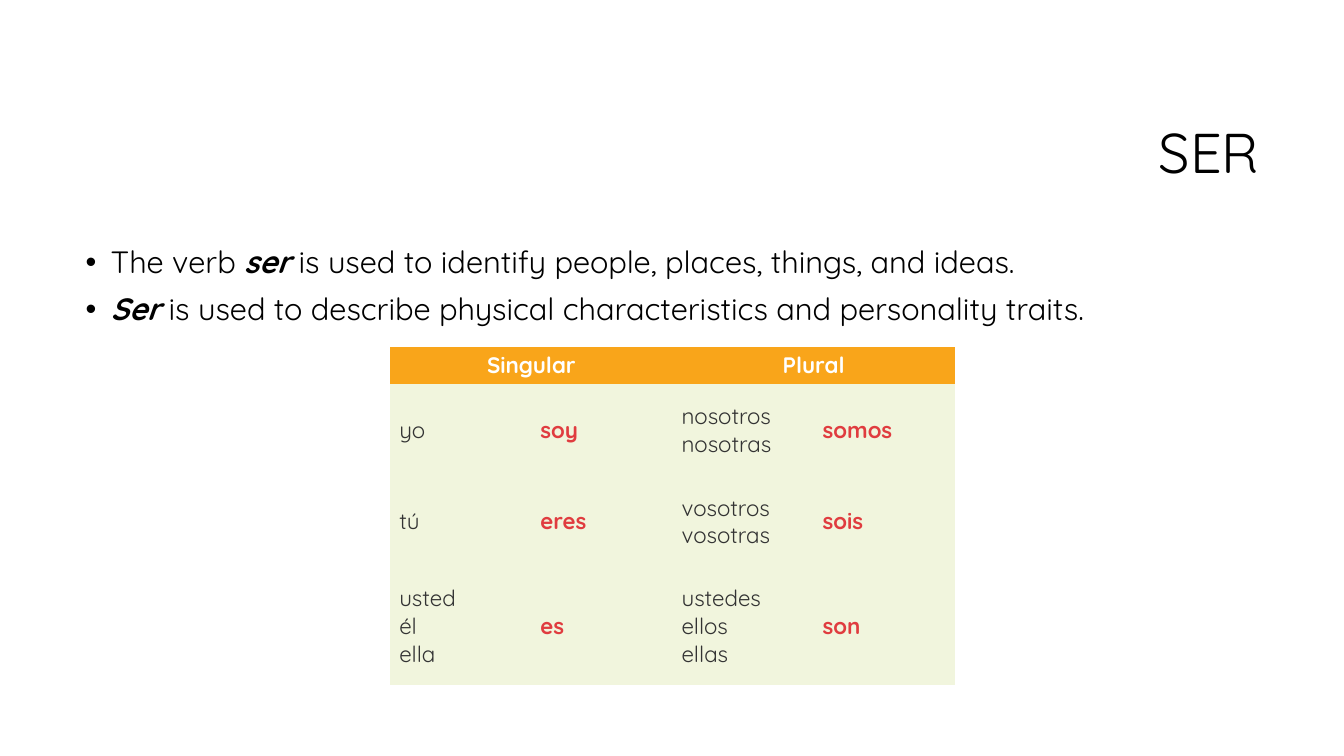
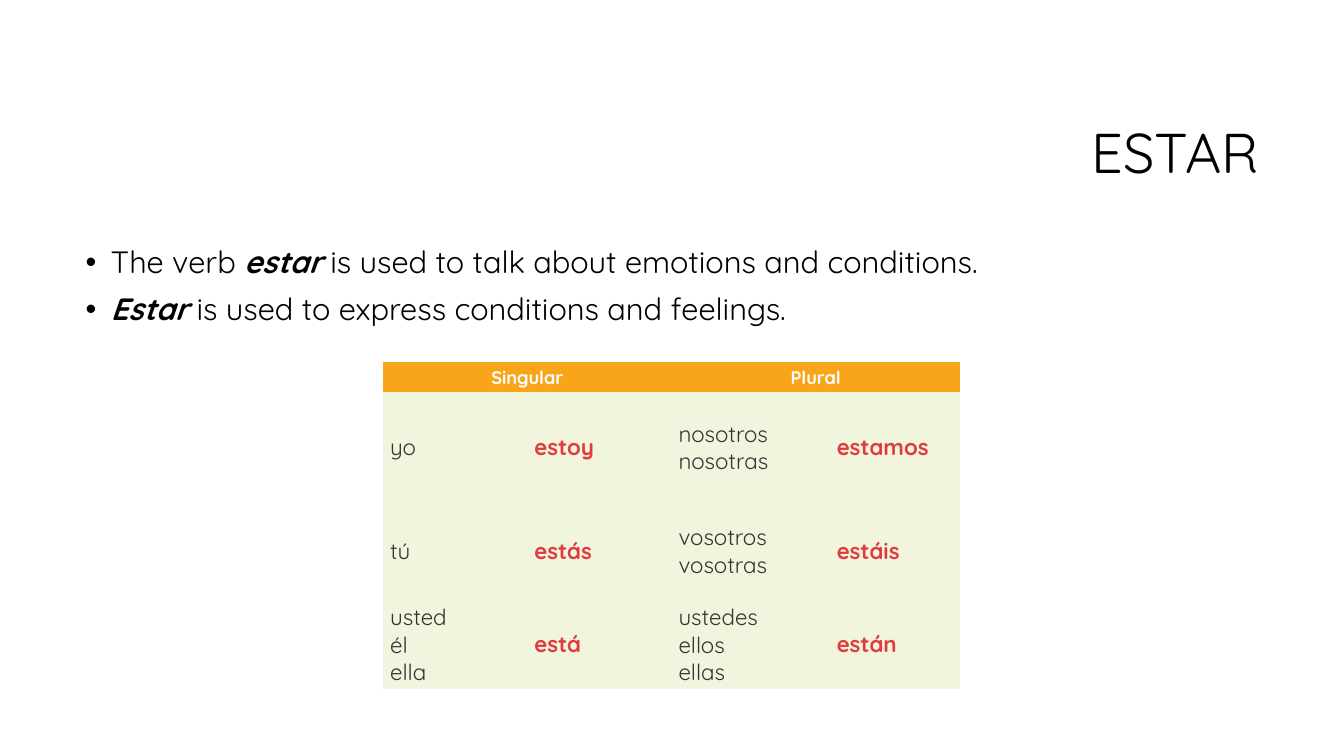
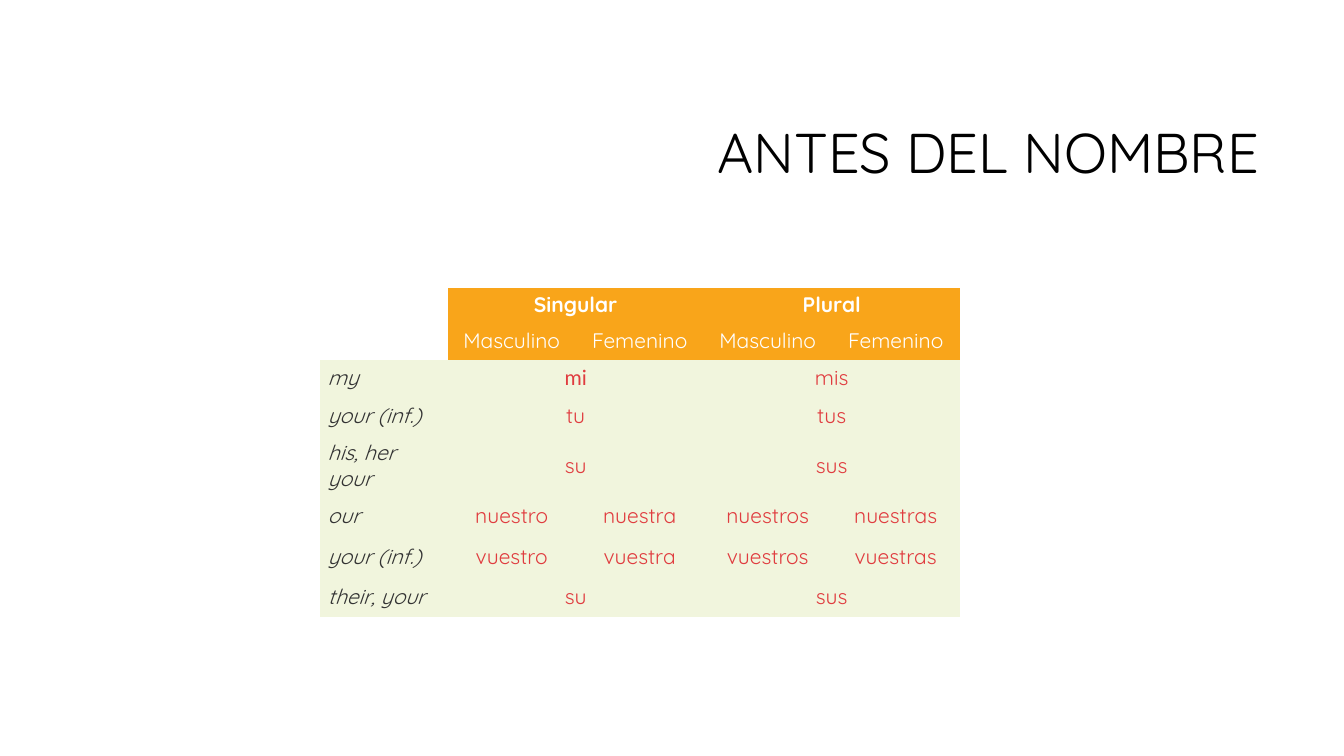
from dataclasses import dataclass

from lxml.etree import SubElement
from pptx import Presentation
from pptx.dml.color import RGBColor
from pptx.enum.text import MSO_ANCHOR as Anchor, MSO_AUTO_SIZE as AutoSize, PP_ALIGN as Align
from pptx.oxml.ns import qn
from pptx.util import Inches, Pt


@dataclass(frozen=True)
class Theme:
    font: str = "Quicksand"
    accent_font: str = "Lato"
    black: str = "000000"
    white: str = "FFFFFF"
    grey: str = "333333"
    red: str = "E03C3F"
    orange: str = "F9A51A"
    cream: str = "F1F5DD"
    title_size: int = 40
    body_size: int = 22
    table_size: int = 16
    small_header_size: int = 13
    possessive_size: int = 15
    line_spacing: float = 0.9
    bullet_gap: int = 10


THEME = Theme()
TITLE_ONLY = 5
TITLE_BOX = (3.17, 0.84, 9.42, 1.41)
BODY_BOX = (0.75, 2.4, 11.83, 4.4)
PLAIN_TABLE_STYLE = "{2D5ABB26-0587-4C30-8999-92F81FD0307C}"


def set_font(paragraph, size, color, name=THEME.font, bold=False, italic=False):
    font = paragraph.font
    font.name = name
    font.size = Pt(size)
    font.bold = bold
    font.italic = italic
    font.color.rgb = RGBColor.from_string(color)


def add_titled_slide(presentation, title):
    slide = presentation.slides.add_slide(presentation.slide_layouts[TITLE_ONLY])
    shape = slide.shapes.title
    shape.left, shape.top, shape.width, shape.height = map(Inches, TITLE_BOX)
    frame = shape.text_frame
    frame.auto_size = AutoSize.NONE
    frame.vertical_anchor = Anchor.MIDDLE
    paragraph = frame.paragraphs[0]
    paragraph.text = title
    paragraph.alignment = Align.RIGHT
    paragraph.line_spacing = THEME.line_spacing
    set_font(paragraph, THEME.title_size, THEME.black)
    return slide


def add_bullets(slide, box, bullets):
    frame = slide.shapes.add_textbox(*map(Inches, box)).text_frame
    frame.word_wrap = True
    for index, (before, verb, after) in enumerate(bullets):
        paragraph = frame.add_paragraph() if index else frame.paragraphs[0]
        paragraph.line_spacing = THEME.line_spacing
        paragraph.space_before = Pt(THEME.bullet_gap if index else 0)
        properties = paragraph._p.get_or_add_pPr()
        properties.set("marL", str(Inches(0.25)))
        properties.set("indent", str(Inches(-0.25)))
        SubElement(properties, qn("a:buFont"), typeface="Arial")
        SubElement(properties, qn("a:buChar"), char="•")
        set_font(paragraph, THEME.body_size, THEME.black)
        if before:
            paragraph.add_run().text = before
        emphasis = paragraph.add_run()
        emphasis.text = verb
        emphasis.font.bold = emphasis.font.italic = True
        paragraph.add_run().text = after


def add_plain_table(slide, left, top, columns, rows):
    frame = slide.shapes.add_table(
        len(rows), len(columns), Inches(left), Inches(top), Inches(sum(columns)), Inches(sum(rows))
    )
    next(frame.element.iter(qn("a:tableStyleId"))).text = PLAIN_TABLE_STYLE
    table = frame.table
    table.first_row = table.horz_banding = False
    for column, width in zip(table.columns, columns):
        column.width = Inches(width)
    for row, height in zip(table.rows, rows):
        row.height = Inches(height)
    return table


def fill_cell(cell, text, fill, margins, size, color, align=Align.LEFT, **font):
    cell.fill.solid()
    cell.fill.fore_color.rgb = RGBColor.from_string(fill)
    cell.vertical_anchor = Anchor.MIDDLE
    cell.margin_left = cell.margin_right = Inches(margins[0])
    cell.margin_top = cell.margin_bottom = Inches(margins[1])
    paragraph = cell.text_frame.paragraphs[0]
    paragraph.text = text
    paragraph.alignment = align
    set_font(paragraph, size, color, **font)


def add_header_pair(table, first_column, margins, size):
    for column, text in zip((first_column, first_column + 2), ("Singular", "Plural")):
        cell = table.cell(0, column)
        cell.merge(table.cell(0, column + 1))
        fill_cell(cell, text, THEME.orange, margins, size, THEME.white, Align.CENTER, bold=True)


def add_conjugation(slide, left, top, columns, rows, side_margin, header_size, forms):
    table = add_plain_table(slide, left, top, columns, rows)
    margins = (side_margin, 0.04)
    add_header_pair(table, 0, margins, header_size)
    pronouns = (
        ("yo", "nosotros\nnosotras"),
        ("tú", "vosotros\nvosotras"),
        ("usted\nél\nella", "ustedes\nellos\nellas"),
    )
    for row, (subjects, verbs) in enumerate(zip(pronouns, forms), 1):
        for pair, (subject, verb) in enumerate(zip(subjects, verbs)):
            fill_cell(table.cell(row, 2 * pair), subject, THEME.cream, margins,
                      THEME.table_size, THEME.grey)
            fill_cell(table.cell(row, 2 * pair + 1), verb, THEME.cream, margins,
                      THEME.table_size, THEME.red, bold=True)


def add_possessives(slide, left, top, columns, rows):
    table = add_plain_table(slide, left, top, columns, rows)
    size = THEME.possessive_size
    header_margins, margins = (0.06, 0.03), (0.08, 0.04)
    add_header_pair(table, 1, header_margins, size)
    for row in range(2):
        fill_cell(table.cell(row, 0), "", THEME.white, header_margins, size, THEME.grey)
    for column, gender in enumerate(("Masculino", "Femenino") * 2, 1):
        fill_cell(table.cell(1, column), gender, THEME.orange, header_margins, size,
                  THEME.white, Align.CENTER)
    possessives = (
        ("my", "mi", "mis"),
        ("your (inf.)", "tu", "tus"),
        ("his, her your", "su", "sus"),
        ("our", "nuestro", "nuestra", "nuestros", "nuestras"),
        ("your (inf.)", "vuestro", "vuestra", "vuestros", "vuestras"),
        ("their, your", "su", "sus"),
    )
    for row, (english, *words) in enumerate(possessives, 2):
        fill_cell(table.cell(row, 0), english, THEME.cream, margins, size, THEME.grey, italic=True)
        span = 4 // len(words)
        for index, word in enumerate(words):
            column = 1 + index * span
            cell = table.cell(row, column)
            if span > 1:
                cell.merge(table.cell(row, column + span - 1))
            fill_cell(cell, word, THEME.cream, margins, size, THEME.red, Align.CENTER,
                      name=THEME.accent_font if word == "mi" else THEME.font)


def main():
    presentation = Presentation()
    presentation.slide_width = Inches(13.33)
    presentation.slide_height = Inches(7.5)

    slide = add_titled_slide(presentation, "SER")
    add_bullets(slide, BODY_BOX, (
        ("The verb ", "ser", " is used to identify people, places, things, and ideas."),
        ("", "Ser", " is used to describe physical characteristics and personality traits."),
    ))
    add_conjugation(slide, 3.87, 3.44, [1.4] * 4, (0.37, 0.91, 0.91, 1.17), 0.09,
                    THEME.table_size, (("soy", "somos"), ("eres", "sois"), ("es", "son")))

    slide = add_titled_slide(presentation, "ESTAR")
    add_bullets(slide, BODY_BOX, (
        ("The verb ", "estar", " is used to talk about emotions and conditions."),
        ("", "Estar", " is used to express conditions and feelings."),
    ))
    add_conjugation(slide, 3.8, 3.59, (1.43, 1.43, 1.57, 1.29), (0.3, 1.1, 0.95, 0.9), 0.07,
                    THEME.small_header_size,
                    (("estoy", "estamos"), ("estás", "estáis"), ("está", "están")))

    slide = add_titled_slide(presentation, "ANTES DEL NOMBRE")
    add_possessives(slide, 3.17, 2.86, [1.27] * 5,
                    (0.31, 0.39, 0.35, 0.4, 0.6, 0.4, 0.4, 0.4))

    presentation.save("out.pptx")


if __name__ == "__main__":
    main()
